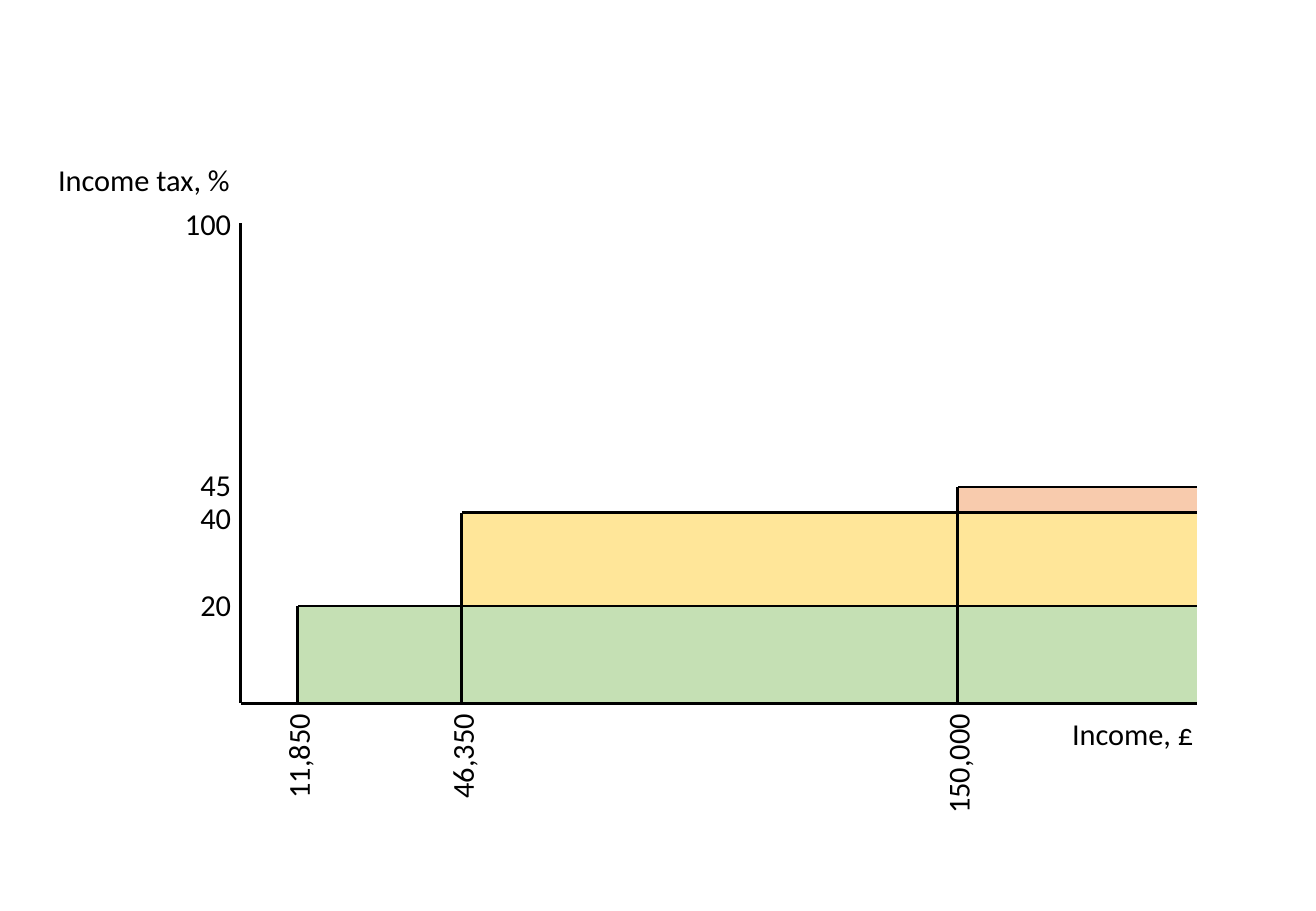
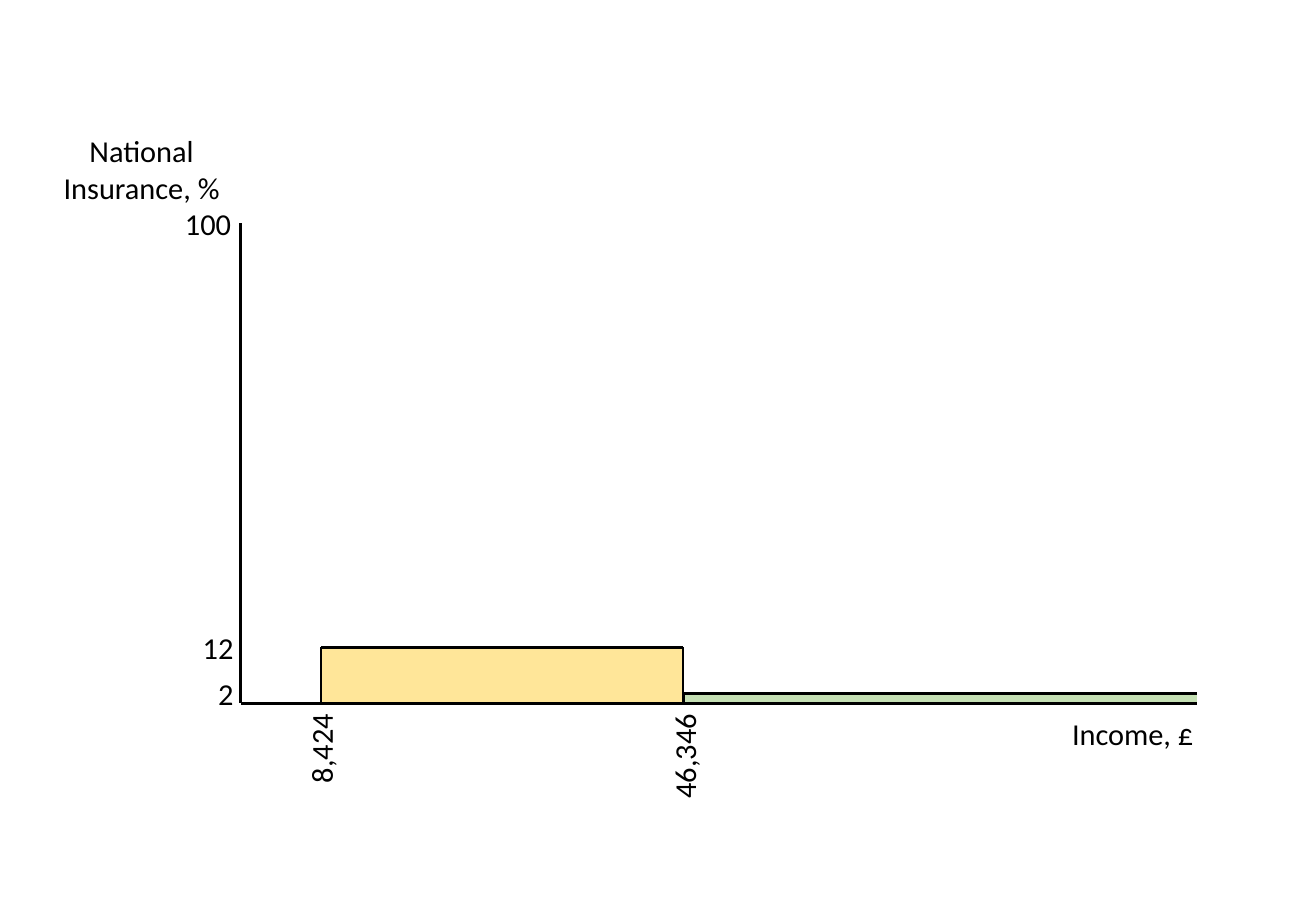
from dataclasses import dataclass

from lxml import etree
from pptx import Presentation
from pptx.dml.color import RGBColor
from pptx.enum import shapes, text
from pptx.oxml import ns
from pptx.util import Inches, Pt


@dataclass(frozen=True)
class Theme:
    font: str = "Calibri"
    size: int = 18
    line_width: float = 1.5
    ink: str = "000000"
    green: str = "C5E0B4"
    yellow: str = "FFE699"
    orange: str = "F8CBAD"


@dataclass(frozen=True)
class Band:
    left: float
    right: float
    top: float
    bottom: float
    color: str
    rate: str
    rate_top: float
    threshold: str
    threshold_length: float = 0.91


THEME = Theme()
AXIS_X, AXIS_TOP = 1.98, 1.84
AXIS_Y, AXIS_RIGHT = 5.79, 9.85
LABEL_WIDTH, LABEL_HEIGHT = 0.91, 0.4
RATE_LEFT = 1.09
THRESHOLD_TOP = 5.78

INCOME_TAX = [
    Band(2.45, AXIS_RIGHT, 4.99, AXIS_Y, THEME.green, "20", 4.78, "11,850"),
    Band(3.8, AXIS_RIGHT, 4.22, 4.99, THEME.yellow, "40", 4.06, "46,350"),
    Band(7.88, AXIS_RIGHT, 4.01, 4.22, THEME.orange, "45", 3.79, "150,000", 1.14),
]
NATIONAL_INSURANCE = [
    Band(5.63, AXIS_RIGHT, 5.71, AXIS_Y, THEME.green, "2", 5.51, "46,346"),
    Band(2.64, 5.62, 5.33, AXIS_Y, THEME.yellow, "12", 5.13, "8,424"),
]


def add_area(slide, band):
    shape = slide.shapes.add_shape(
        shapes.MSO_SHAPE.RECTANGLE, Inches(band.left), Inches(band.top),
        Inches(band.right - band.left), Inches(band.bottom - band.top))
    shape.shadow.inherit = False
    shape.fill.solid()
    shape.fill.fore_color.rgb = RGBColor.from_string(band.color)
    shape.line.fill.background()


def add_line(slide, x1, y1, x2, y2):
    line = slide.shapes.add_connector(
        shapes.MSO_CONNECTOR.STRAIGHT,
        Inches(x1), Inches(y1), Inches(x2), Inches(y2))
    line.line.color.rgb = RGBColor.from_string(THEME.ink)
    line.line.width = Pt(THEME.line_width)
    etree.SubElement(line._element.spPr, ns.qn("a:effectLst"))


def add_label(slide, words, left, top, width=LABEL_WIDTH, height=LABEL_HEIGHT,
              align=text.PP_ALIGN.RIGHT, rotation=0):
    box = slide.shapes.add_textbox(
        Inches(left), Inches(top), Inches(width), Inches(height))
    box.rotation = rotation
    box.text_frame.word_wrap = True
    box.text_frame.auto_size = text.MSO_AUTO_SIZE.SHAPE_TO_FIT_TEXT
    paragraph = box.text_frame.paragraphs[0]
    paragraph.alignment = align
    run = paragraph.add_run()
    run.text = words
    run.font.name = THEME.font
    run.font.size = Pt(THEME.size)
    run.font.color.rgb = RGBColor.from_string(THEME.ink)


def add_threshold(slide, band):
    length = band.threshold_length
    add_label(slide, band.threshold, band.left - length / 2,
              THRESHOLD_TOP + (length - LABEL_HEIGHT) / 2,
              length, rotation=270)


def add_axes(slide):
    add_line(slide, AXIS_X, AXIS_TOP, AXIS_X, AXIS_Y)
    add_line(slide, AXIS_RIGHT, AXIS_Y, AXIS_X, AXIS_Y)
    add_label(slide, "100", RATE_LEFT, 1.64)
    add_label(slide, "Income, £", 8.45, 5.84, 1.47)


def add_rate_chart(slide, bands, rate_left=RATE_LEFT):
    for band in bands:
        add_area(slide, band)
    add_axes(slide)
    for band in bands:
        add_line(slide, band.left, band.top, band.left, AXIS_Y)
        add_line(slide, band.right, band.top, band.left, band.top)
        if band.right < AXIS_RIGHT:
            add_line(slide, band.right, band.top, band.right, AXIS_Y)
        add_label(slide, band.rate, rate_left, band.rate_top)
        add_threshold(slide, band)


def main():
    presentation = Presentation()
    presentation.slide_width = Inches(10.83)
    presentation.slide_height = Inches(7.5)
    blank = presentation.slide_layouts[6]

    slide = presentation.slides.add_slide(blank)
    add_rate_chart(slide, INCOME_TAX)
    add_label(slide, "Income tax, %", 0.34, 1.28, 1.65)

    slide = presentation.slides.add_slide(blank)
    add_rate_chart(slide, NATIONAL_INSURANCE, rate_left=1.11)
    add_label(slide, "National Insurance, %", 0.34, 1.04, 1.65, 0.71,
              text.PP_ALIGN.CENTER)

    presentation.save("out.pptx")


if __name__ == "__main__":
    main()
